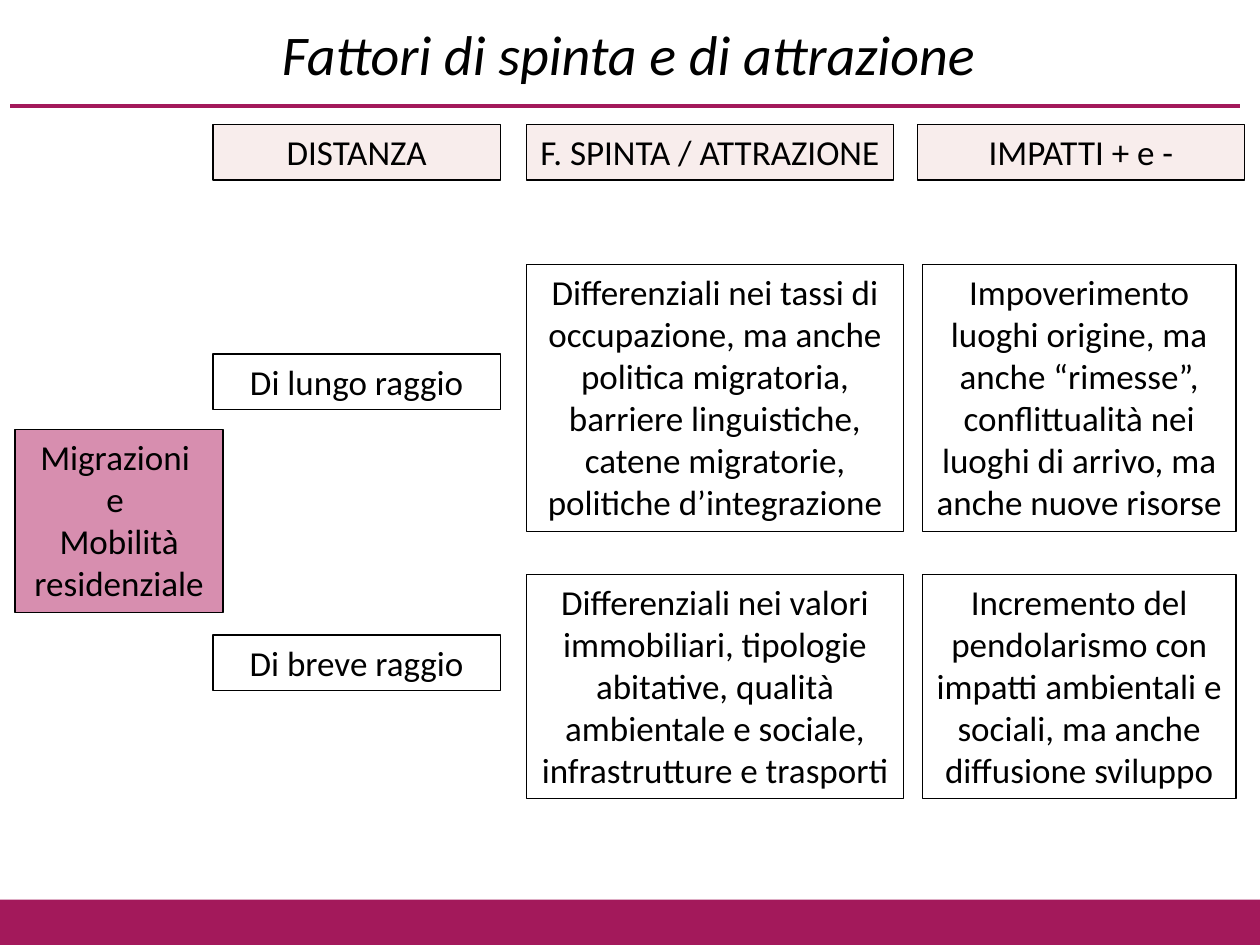
from dataclasses import dataclass

from lxml import etree
from pptx import Presentation
from pptx import util as u
from pptx.dml.color import RGBColor
from pptx.enum import shapes, text
from pptx.oxml.ns import qn

FONT = "Calibri"
BLACK = "000000"
MAGENTA = "A3195B"
PINK = "B11F61"
ROSE = "F2DCDB"

DISTANCE_LEFT, FACTORS_LEFT, IMPACTS_LEFT = 1.69, 4.18, 7.32
DISTANCE_WIDTH, FACTORS_WIDTH, IMPACTS_WIDTH = 2.28, 2.99, 2.49
HEADER_TOP, LABEL_HEIGHT = 0.99, 0.44
LONG_TOP, LONG_HEIGHT = 2.1, 2.12
SHORT_TOP, SHORT_HEIGHT = 4.56, 1.78


@dataclass
class Box:
    words: str
    left: float
    top: float
    width: float
    height: float
    fill: str | None = None


BOXES = [
    Box("Migrazioni \ne \nMobilità residenziale", 0.12, 3.41, 1.65, 1.45, PINK),
    Box("DISTANZA", DISTANCE_LEFT, HEADER_TOP, DISTANCE_WIDTH, LABEL_HEIGHT, ROSE),
    Box("F. SPINTA / ATTRAZIONE", FACTORS_LEFT, HEADER_TOP, 2.91, LABEL_HEIGHT, ROSE),
    Box("IMPATTI + e -", 7.28, HEADER_TOP, 2.6, LABEL_HEIGHT, ROSE),
    Box("Di lungo raggio", DISTANCE_LEFT, 2.81, DISTANCE_WIDTH, LABEL_HEIGHT),
    Box("Differenziali nei tassi di occupazione, ma anche politica migratoria, "
        "barriere linguistiche, catene migratorie, politiche d’integrazione",
        FACTORS_LEFT, LONG_TOP, FACTORS_WIDTH, LONG_HEIGHT),
    Box("Impoverimento luoghi origine, ma anche “rimesse”, conflittualità nei "
        "luoghi di arrivo, ma anche nuove risorse",
        IMPACTS_LEFT, LONG_TOP, IMPACTS_WIDTH, LONG_HEIGHT),
    Box("Di breve raggio", DISTANCE_LEFT, 5.04, DISTANCE_WIDTH, LABEL_HEIGHT),
    Box("Differenziali nei valori immobiliari, tipologie abitative, qualità "
        "ambientale e sociale, infrastrutture e trasporti",
        FACTORS_LEFT, SHORT_TOP, FACTORS_WIDTH, SHORT_HEIGHT),
    Box("Incremento del pendolarismo con impatti ambientali e sociali, ma anche "
        "diffusione sviluppo",
        IMPACTS_LEFT, SHORT_TOP, IMPACTS_WIDTH, SHORT_HEIGHT),
]


def color(value: str) -> RGBColor:
    return RGBColor.from_string(value)


def write(shape, words: str, size: int, anchor, italic: bool = False) -> None:
    frame = shape.text_frame
    frame.word_wrap = True
    frame.vertical_anchor = anchor
    frame.text = words
    for paragraph in frame.paragraphs:
        paragraph.alignment = text.PP_ALIGN.CENTER
        for run in paragraph.runs:
            run.font.name = FONT
            run.font.size = u.Pt(size)
            run.font.italic = italic
            run.font.color.rgb = color(BLACK)


def add_rectangle(slide, left: float, top: float, width: float, height: float,
                  fill: str | None):
    shape = slide.shapes.add_shape(
        shapes.MSO_SHAPE.RECTANGLE, u.Inches(left), u.Inches(top),
        u.Inches(width), u.Inches(height))
    shape.shadow.inherit = False
    if fill:
        shape.fill.solid()
        shape.fill.fore_color.rgb = color(fill)
    else:
        shape.fill.background()
    return shape


def make_half_transparent(shape) -> None:
    fill_color = shape._element.spPr.find(qn("a:solidFill")).find(qn("a:srgbClr"))
    etree.SubElement(fill_color, qn("a:alpha"), val="50000")


def add_box(slide, box: Box) -> None:
    shape = add_rectangle(slide, box.left, box.top, box.width, box.height, box.fill)
    if box.fill:
        make_half_transparent(shape)
    shape.line.color.rgb = color(BLACK)
    shape.line.width = u.Pt(0.75)
    write(shape, box.words, 20, text.MSO_ANCHOR.TOP)
    shape.text_frame.auto_size = text.MSO_AUTO_SIZE.SHAPE_TO_FIT_TEXT


def add_frame(slide) -> None:
    """Draw the rule under the title and the footer band."""
    rule = slide.shapes.add_connector(
        shapes.MSO_CONNECTOR.STRAIGHT, u.Inches(0.08), u.Inches(0.84),
        u.Inches(9.84), u.Inches(0.84))
    rule.line.color.rgb = color(MAGENTA)
    rule.line.width = u.Pt(2.5)
    etree.SubElement(rule._element.spPr, qn("a:effectLst"))
    footer = add_rectangle(slide, 0, 7.14, 10, 0.39, MAGENTA)
    footer.line.fill.background()


def add_title(slide) -> None:
    title = slide.shapes.add_textbox(
        u.Inches(0.49), u.Inches(-0.03), u.Inches(9), u.Inches(0.99))
    write(title, "Fattori di spinta e di attrazione", 32,
          text.MSO_ANCHOR.MIDDLE, italic=True)
    title.text_frame.paragraphs[0].line_spacing = 0.85


def main() -> None:
    presentation = Presentation()
    presentation.slide_width = u.Inches(10)
    presentation.slide_height = u.Inches(7.5)
    slide = presentation.slides.add_slide(presentation.slide_layouts[6])
    add_frame(slide)
    add_title(slide)
    for box in BOXES:
        add_box(slide, box)
    presentation.save("out.pptx")


if __name__ == "__main__":
    main()
